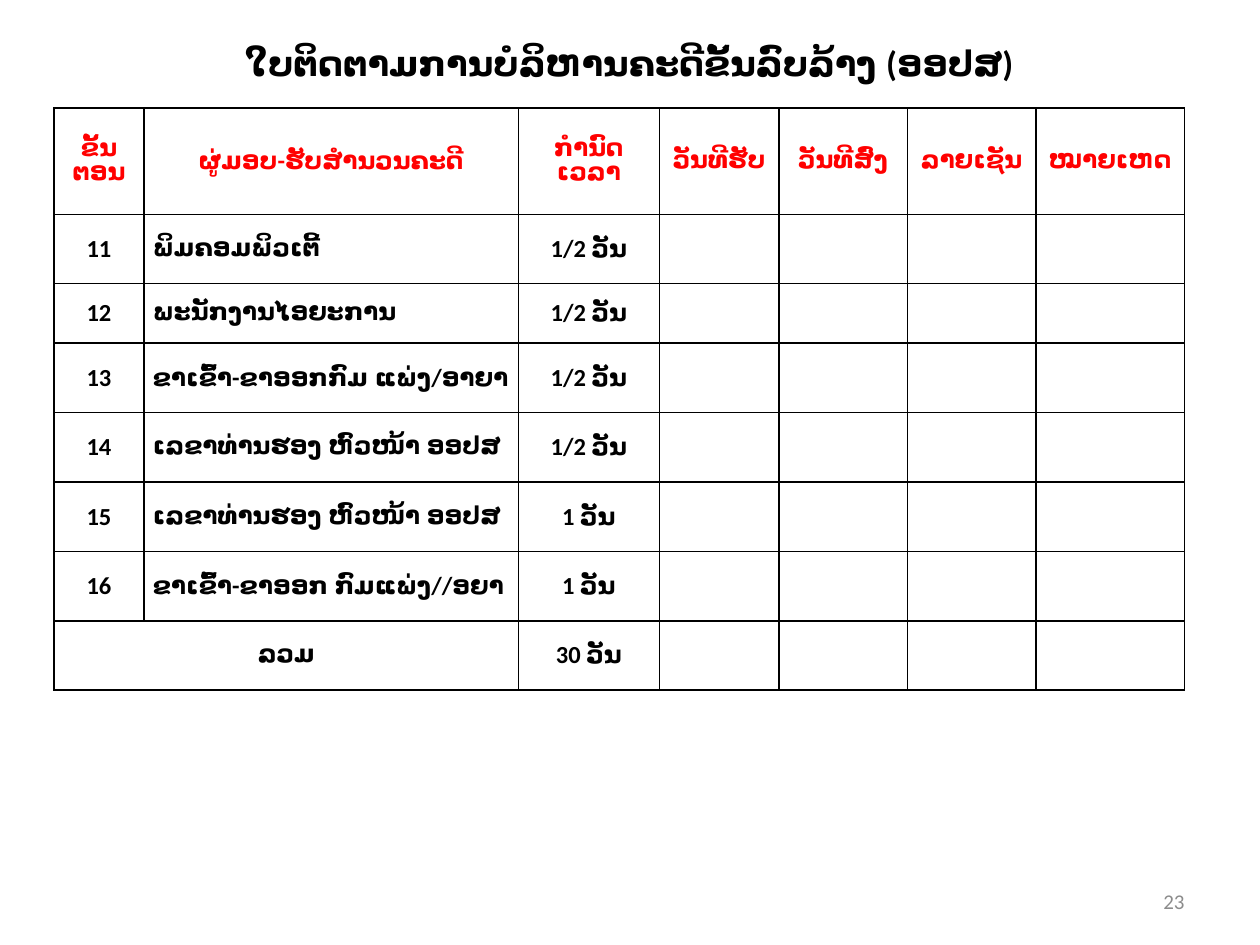
from lxml.etree import SubElement
from pptx import Presentation
from pptx.dml.color import RGBColor
from pptx.enum.text import MSO_ANCHOR as Anchor, PP_ALIGN as Align
from pptx.oxml import parse_xml
from pptx.oxml.ns import nsdecls, qn
from pptx.util import Cm, Pt

TITLE = "ໃບຕິດຕາມການບໍລິຫານຄະດີຂັ້ນລົບລ້າງ (ອອປສ)"
PAGE_NUMBER = "23"
HEADINGS = ["ຂັ້ນ\nຕອນ", "ຜູ່ມອບ-ຮັບສໍານວນຄະດີ", "ກໍານົດເວລາ", "ວັນທີຮັບ",
            "ວັນທີສົ່ງ", "ລາຍເຊັນ", "ໝາຍເຫດ"]
STEPS = [
    ("11", "ພິມຄອມພິວເຕີ້", "1/2 ວັນ"),
    ("12", "ພະນັກງານໄອຍະການ", "1/2 ວັນ"),
    ("13", "ຂາເຂົ້າ-ຂາອອກກົມ ແພ່ງ/ອາຍາ", "1/2 ວັນ"),
    ("14", "ເລຂາທ່ານຮອງ ຫົວໜ້າ ອອປສ", "1/2 ວັນ"),
    ("15", "ເລຂາທ່ານຮອງ ຫົວໜ້າ ອອປສ", "1 ວັນ"),
    ("16", "ຂາເຂົ້າ-ຂາອອກ ກົມແພ່ງ//ອຍາ", "1 ວັນ"),
]
TOTAL = ("ລວມ", "", "30 ວັນ")
ROWS = [HEADINGS, *STEPS, TOTAL]
COLUMN_WIDTHS = [1.81, 7.55, 2.84, 2.41, 2.59, 2.59, 3]
ROW_HEIGHTS = [2.14, 1.4, 1.2] + [1.4] * 5
RED, BLACK, GREY = "FF0000", "000000", "8C8C8C"


def rgb(color):
    return RGBColor.from_string(color)


def line_xml(tag, color, width):
    return parse_xml(
        f'<a:{tag} {nsdecls("a")} w="{Pt(width)}"><a:solidFill>'
        f'<a:srgbClr val="{color}"/></a:solidFill></a:{tag}>')


def write(frame, text, size=14, color=BLACK, bold=True, align=Align.CENTER, outline=None):
    for index, line in enumerate(text.split("\n")):
        paragraph = frame.add_paragraph() if index else frame.paragraphs[0]
        paragraph.alignment = align
        run = paragraph.add_run()
        run.text = line
        run.font.name = "Calibri"
        run.font.size = Pt(size)
        run.font.bold = bold
        run.font.color.rgb = rgb(color)
        if outline:
            run.font._element.insert(0, line_xml("ln", outline, 0.75))


def add_label(slide, box, text, **style):
    frame = slide.shapes.add_textbox(*map(Cm, box)).text_frame
    frame.word_wrap = True
    frame.vertical_anchor = Anchor.MIDDLE
    write(frame, text, **style)


def format_cell(cell):
    cell.fill.background()
    cell.vertical_anchor = Anchor.MIDDLE
    cell.margin_left = cell.margin_right = Cm(0.18)
    cell.margin_top = cell.margin_bottom = 0
    properties = cell._tc.get_or_add_tcPr()
    for index, side in enumerate(("lnL", "lnR", "lnT", "lnB")):
        properties.insert(index, line_xml(side, BLACK, 1))


def add_tracking_table(slide):
    table = slide.shapes.add_table(
        len(ROWS), len(HEADINGS), Cm(1.09), Cm(2.18),
        Cm(sum(COLUMN_WIDTHS)), Cm(sum(ROW_HEIGHTS))).table
    table.first_row = table.horz_banding = False
    for column, width in zip(table.columns, COLUMN_WIDTHS):
        column.width = Cm(width)
    for row, height in zip(table.rows, ROW_HEIGHTS):
        row.height = Cm(height)
    for cell in table.iter_cells():
        format_cell(cell)
    last = len(ROWS) - 1
    table.cell(last, 0).merge(table.cell(last, 1))
    for r, texts in enumerate(ROWS):
        heading = {"color": RED, "outline": RED} if r == 0 else {}
        for c, text in enumerate(texts):
            if text:
                align = Align.LEFT if c == 1 and r else Align.CENTER
                write(table.cell(r, c).text_frame, text, align=align, **heading)


def main():
    deck = Presentation()
    deck.slide_width, deck.slide_height = Cm(25.4), Cm(19.05)
    slide = deck.slides.add_slide(deck.slide_layouts[6])
    add_tracking_table(slide)
    add_label(slide, (1.09, 0.38, 23.19, 1.75), TITLE, size=20)
    add_label(slide, (18.21, 17.65, 5.92, 1.02), PAGE_NUMBER,
              size=12, color=GREY, bold=False, align=Align.RIGHT)
    deck.save("out.pptx")


if __name__ == "__main__":
    main()
